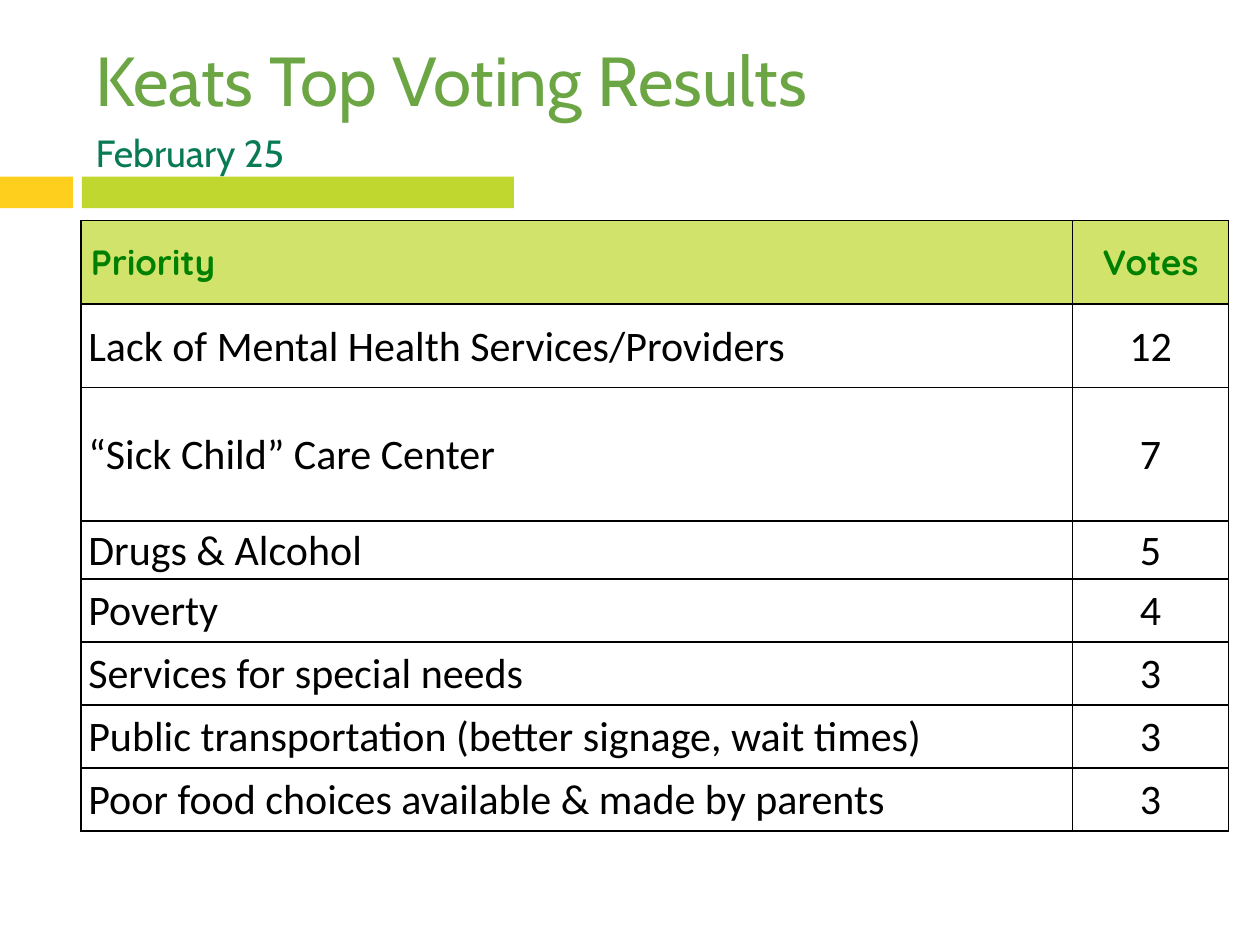
"""Build the slide with the top voting results of Keats."""
from lxml import etree
from pptx import Presentation
from pptx.dml.color import RGBColor
from pptx.enum.shapes import MSO_SHAPE
from pptx.enum.text import MSO_ANCHOR, PP_ALIGN
from pptx.oxml.ns import qn
from pptx.util import Cm, Pt

RECTANGLE = MSO_SHAPE.RECTANGLE
MIDDLE = MSO_ANCHOR.MIDDLE
LEFT, CENTER = PP_ALIGN.LEFT, PP_ALIGN.CENTER

COLORS = {
    "title": "6CA644", "date": "087B54", "yellow": "FFCF1D", "lime": "C0D730",
    "header_fill": "D2E36B", "header_text": "008000", "black": "000000",
}
HEADINGS = [
    ("Keats Top Voting Results", (1.68, 0.64, 24.33, 1.9), 39.6, "title"),
    ("February 25", (1.68, 2.54, 7.26, 1.07), 21.6, "date"),
]
BARS = [("yellow", 0, 1.47), ("lime", 1.65, 8.71)]
BAR_TOP, BAR_HEIGHT = 3.56, 0.64
ROWS = [
    ("Priority", "Votes", 1.68),
    ("Lack of Mental Health Services/Providers", "12", 1.68),
    ("“Sick Child” Care Center", "7", 2.69),
    ("Drugs & Alcohol", "5", 1.17),
    ("Poverty", "4", 1.27),
    ("Services for special needs", "3", 1.27),
    ("Public transportation (better signage, wait times)", "3", 1.27),
    ("Poor food choices available & made by parents", "3", 1.27),
]
COLUMN_WIDTHS = (19.99, 3.15)
ALIGNMENTS = (LEFT, CENTER)
TABLE_LEFT, TABLE_TOP = 1.63, 4.45


def color(name):
    return RGBColor.from_string(COLORS[name])


def style_font(paragraph, name, size, color_name, bold=False):
    font = paragraph.runs[0].font
    font.name, font.size, font.bold = name, Pt(size), bold
    font.color.rgb = color(color_name)


def add_heading(slide, text, box, size, color_name):
    text_frame = slide.shapes.add_textbox(*map(Cm, box)).text_frame
    text_frame.word_wrap = True
    text_frame.vertical_anchor = MIDDLE
    text_frame.text = text
    style_font(text_frame.paragraphs[0], "Cabin", size, color_name)


def add_bar(slide, color_name, left, width):
    bar = slide.shapes.add_shape(
        RECTANGLE, Cm(left), Cm(BAR_TOP), Cm(width), Cm(BAR_HEIGHT))
    bar.shadow.inherit = False
    bar.fill.solid()
    bar.fill.fore_color.rgb = color(color_name)
    bar.line.fill.background()


def add_borders(cell):
    properties = cell._tc.get_or_add_tcPr()
    for index, side in enumerate(("a:lnL", "a:lnR", "a:lnT", "a:lnB")):
        line = etree.Element(qn(side), w=str(Pt(1)))
        fill = etree.SubElement(line, qn("a:solidFill"))
        etree.SubElement(fill, qn("a:srgbClr"), val=COLORS["black"])
        properties.insert(index, line)


def fill_cell(cell, text, alignment, is_header):
    cell.text = text
    cell.vertical_anchor = MIDDLE
    cell.margin_left = cell.margin_right = Cm(0.2 if is_header else 0.15)
    cell.margin_top, cell.margin_bottom = 0, Cm(0.05 if is_header else 0.03)
    paragraph = cell.text_frame.paragraphs[0]
    paragraph.alignment = alignment
    paragraph.line_spacing = 1.07
    if is_header:
        cell.fill.solid()
        cell.fill.fore_color.rgb = color("header_fill")
        style_font(paragraph, "Quicksand", 20, "header_text", bold=True)
    else:
        cell.fill.background()
        style_font(paragraph, "Calibri", 24, "black")
    add_borders(cell)


def add_votes_table(slide):
    table = slide.shapes.add_table(
        len(ROWS), len(COLUMN_WIDTHS), Cm(TABLE_LEFT), Cm(TABLE_TOP),
        Cm(sum(COLUMN_WIDTHS)), Cm(sum(row[-1] for row in ROWS))).table
    table.horz_banding = False
    for column, width in zip(table.columns, COLUMN_WIDTHS):
        column.width = Cm(width)
    for row_index, (*texts, height) in enumerate(ROWS):
        table.rows[row_index].height = Cm(height)
        for column_index, text in enumerate(texts):
            fill_cell(table.cell(row_index, column_index), text,
                      ALIGNMENTS[column_index], row_index == 0)


def main():
    presentation = Presentation()
    presentation.slide_width, presentation.slide_height = Cm(25.4), Cm(19.05)
    slide = presentation.slides.add_slide(presentation.slide_layouts[6])
    for bar in BARS:
        add_bar(slide, *bar)
    for heading in HEADINGS:
        add_heading(slide, *heading)
    add_votes_table(slide)
    presentation.save("out.pptx")


if __name__ == "__main__":
    main()
